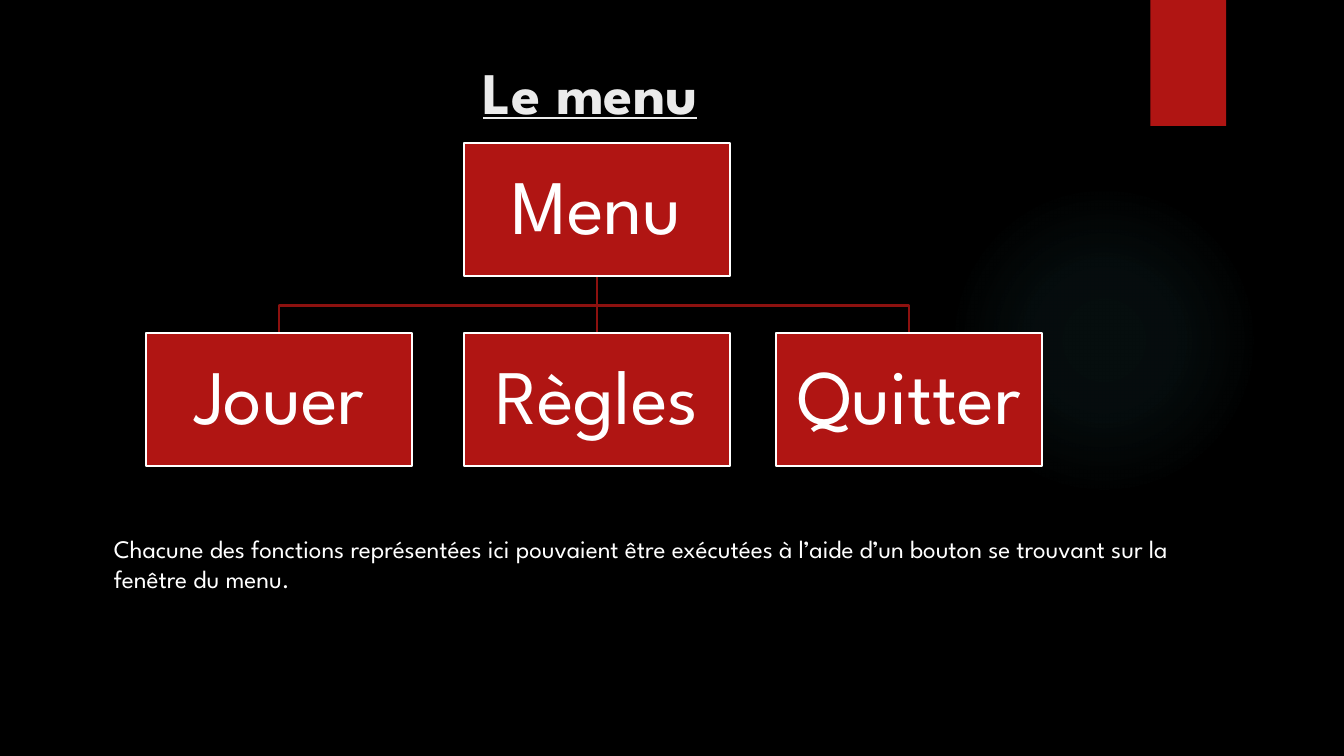
from dataclasses import dataclass

from lxml import etree
from pptx import Presentation
from pptx.dml.color import RGBColor
from pptx.enum.shapes import MSO_CONNECTOR, MSO_SHAPE
from pptx.enum.text import MSO_ANCHOR, MSO_AUTO_SIZE, PP_ALIGN
from pptx.oxml import parse_xml
from pptx.oxml.ns import nsdecls, qn
from pptx.util import Pt


@dataclass(frozen=True)
class Theme:
    font: str = "League Spartan"
    background: RGBColor = RGBColor(0x00, 0x00, 0x00)
    red: RGBColor = RGBColor(0xB0, 0x15, 0x13)
    dark_red: RGBColor = RGBColor(0x8D, 0x11, 0x0F)
    title: RGBColor = RGBColor(0xEB, 0xEB, 0xEB)
    white: RGBColor = RGBColor(0xFF, 0xFF, 0xFF)
    glow: str = "50B9C1"
    title_size: int = 42
    box_size: int = 55
    body_size: int = 18
    line_width: float = 1.5


THEME = Theme()
BOX_WIDTH, BOX_HEIGHT = 190, 95
MENU_LEFT, MENU_TOP = 331.2, 102.2
CHILD_TOP = 238
CHILDREN = [("Jouer", 104.4), ("Règles", MENU_LEFT), ("Quitter", 554.4)]


def points(*values):
    return [Pt(value) for value in values]


def style_text(paragraph, size, color, alignment=PP_ALIGN.LEFT):
    paragraph.alignment = alignment
    font = paragraph.font
    font.name = THEME.font
    font.size = Pt(size)
    font.color.rgb = color


def style_line(line, color):
    line.color.rgb = color
    line.width = Pt(THEME.line_width)


def add_plain_shape(slide, kind, left, top, width, height):
    shape = slide.shapes.add_shape(kind, *points(left, top, width, height))
    shape.shadow.inherit = False
    shape.line.fill.background()
    return shape


def add_glow(slide):
    """Faint circle that fades outwards from its centre."""
    shape = add_plain_shape(slide, MSO_SHAPE.OVAL, 677.5, 131.8, 221.8, 221.8)
    stops = "".join(
        f'<a:gs pos="{position * 1000}"><a:srgbClr val="{THEME.glow}">'
        f'<a:alpha val="{alpha * 1000}"/></a:srgbClr></a:gs>'
        for position, alpha in [(0, 7), (36, 6), (69, 0)]
    )
    gradient = parse_xml(
        f'<a:gradFill {nsdecls("a")}><a:gsLst>{stops}</a:gsLst><a:path path="circle">'
        '<a:fillToRect l="50000" t="50000" r="50000" b="50000"/></a:path></a:gradFill>'
    )
    shape._element.spPr.find(qn("a:prstGeom")).addnext(gradient)


def add_tab(slide):
    shape = add_plain_shape(slide, MSO_SHAPE.RECTANGLE, 821.8, 0, 54, 90)
    shape.fill.solid()
    shape.fill.fore_color.rgb = THEME.red


def set_title(slide, text):
    title = slide.shapes.title
    title.left, title.top, title.width, title.height = points(51.1, 36, 740.9, 110.2)
    frame = title.text_frame
    frame.text = text
    frame.vertical_anchor = MSO_ANCHOR.TOP
    paragraph = frame.paragraphs[0]
    style_text(paragraph, THEME.title_size, THEME.title, PP_ALIGN.CENTER)
    paragraph.font.bold = True
    paragraph.font.underline = True


def add_branch(slide, child_left):
    """Line from the bottom of the menu box to the top of a child box."""
    start_x, end_x = MENU_LEFT + BOX_WIDTH / 2, child_left + BOX_WIDTH / 2
    start_y = MENU_TOP + BOX_HEIGHT
    if start_x == end_x:
        branch = slide.shapes.add_connector(
            MSO_CONNECTOR.STRAIGHT, *points(start_x, start_y, end_x, CHILD_TOP)
        )
        etree.SubElement(branch._element.spPr, qn("a:effectLst"))
    else:
        middle_y = 218.2
        builder = slide.shapes.build_freeform(*points(start_x, start_y))
        corners = [(start_x, middle_y), (end_x, middle_y), (end_x, CHILD_TOP)]
        builder.add_line_segments([points(*corner) for corner in corners], close=False)
        branch = builder.convert_to_shape()
        branch.fill.background()
        branch.shadow.inherit = False
    style_line(branch.line, THEME.dark_red)


def add_box(slide, text, left, top):
    shape = add_plain_shape(slide, MSO_SHAPE.RECTANGLE, left, top, BOX_WIDTH, BOX_HEIGHT)
    shape.fill.solid()
    shape.fill.fore_color.rgb = THEME.red
    style_line(shape.line, THEME.white)
    frame = shape.text_frame
    frame.margin_left = frame.margin_right = Pt(2.75)
    frame.margin_top = frame.margin_bottom = Pt(2.75)
    frame.vertical_anchor = MSO_ANCHOR.MIDDLE
    frame.text = text
    paragraph = frame.paragraphs[0]
    paragraph.line_spacing = 0.9
    style_text(paragraph, THEME.box_size, THEME.white, PP_ALIGN.CENTER)


def add_description(slide, text):
    box = slide.shapes.add_textbox(*points(74.2, 377.3, 770.4, 51.1))
    frame = box.text_frame
    frame.word_wrap = True
    frame.auto_size = MSO_AUTO_SIZE.SHAPE_TO_FIT_TEXT
    frame.text = text
    style_text(frame.paragraphs[0], THEME.body_size, THEME.white)


def main():
    presentation = Presentation()
    presentation.slide_width, presentation.slide_height = points(960, 540)
    title_only = presentation.slide_layouts[5]
    slide = presentation.slides.add_slide(title_only)

    # Background and decoration
    slide.background.fill.solid()
    slide.background.fill.fore_color.rgb = THEME.background
    add_glow(slide)
    add_tab(slide)

    set_title(slide, "Le menu")

    # Menu tree: branches first, boxes on top
    for _, left in reversed(CHILDREN):
        add_branch(slide, left)
    add_box(slide, "Menu", MENU_LEFT, MENU_TOP)
    for name, left in CHILDREN:
        add_box(slide, name, left, CHILD_TOP)

    add_description(
        slide,
        "Chacune des fonctions représentées ici pouvaient être exécutées à l’aide "
        "d’un bouton se trouvant sur la fenêtre du menu.",
    )
    presentation.save("out.pptx")


if __name__ == "__main__":
    main()
